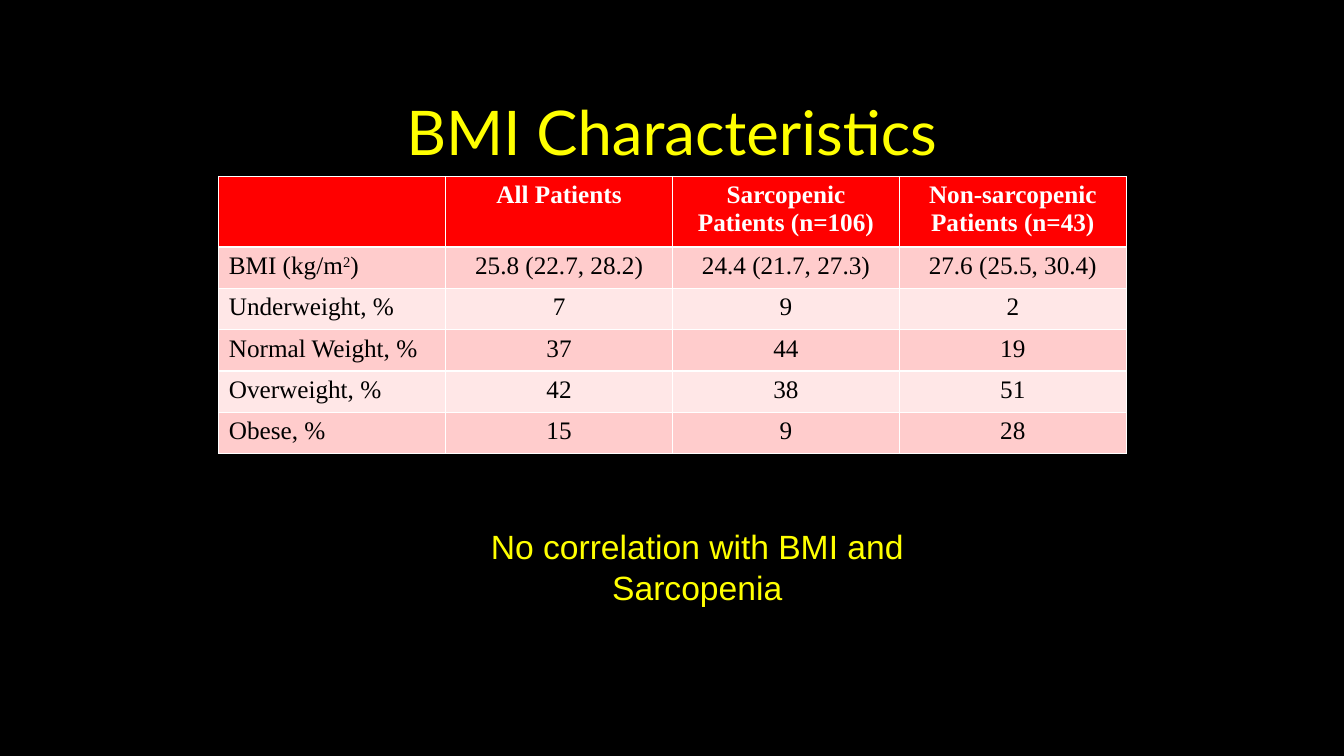
import dataclasses

import pptx
import pptx.dml.color
import pptx.enum.text
import pptx.util

Inches = pptx.util.Inches
Align = pptx.enum.text.PP_ALIGN
Anchor = pptx.enum.text.MSO_ANCHOR


@dataclasses.dataclass(frozen=True)
class Theme:
    """Colours, fonts and type sizes of the slide."""
    background: str = "000000"
    accent: str = "FFFF00"
    header_fill: str = "FF0000"
    header_text: str = "FFFFFF"
    body_text: str = "000000"
    bands: tuple = ("FFCCCC", "FFE7E7")
    title_font: str = "Lato"
    table_font: str = "Times New Roman"
    note_font: str = "Arial"
    title_size: int = 44
    table_size: int = 18
    note_size: int = 24


THEME = Theme()
BMI_ROWS = [
    ["", "All Patients", "Sarcopenic Patients (n=106)", "Non-sarcopenic Patients (n=43)"],
    [("BMI (kg/m", "2", ")"), "25.8 (22.7, 28.2)", "24.4 (21.7, 27.3)", "27.6 (25.5, 30.4)"],
    ["Underweight, %", "7", "9", "2"],
    ["Normal Weight, %", "37", "44", "19"],
    ["Overweight, %", "42", "38", "51"],
    ["Obese, %", "15", "9", "28"],
]


def rgb(colour):
    """Turn a hex string into a colour."""
    return pptx.dml.color.RGBColor.from_string(colour)


def style_font(font, name, size, colour, bold=False):
    """Set the typeface, size, colour and weight of a font."""
    font.name = name
    font.size = pptx.util.Pt(size)
    font.color.rgb = rgb(colour)
    font.bold = bold


def add_label(page, text, left, top, width, height, font, size, anchor):
    """Add a centred, wrapping text box in the accent colour."""
    box = page.shapes.add_textbox(Inches(left), Inches(top), Inches(width), Inches(height))
    box.text_frame.word_wrap = True
    box.text_frame.vertical_anchor = anchor
    box.text_frame.text = text
    para = box.text_frame.paragraphs[0]
    para.alignment = Align.CENTER
    style_font(para.runs[0].font, font, size, THEME.accent)


def fill_cell(cell, content, fill, colour, bold, alignment):
    """Write a cell; a tuple holds base text and superscript in turn."""
    cell.fill.solid()
    cell.fill.fore_color.rgb = rgb(fill)
    para = cell.text_frame.paragraphs[0]
    para.alignment = alignment
    if not content:
        return
    pieces = content if isinstance(content, tuple) else (content,)
    for index, piece in enumerate(pieces):
        span = para.add_run()
        span.text = piece
        style_font(span.font, THEME.table_font, THEME.table_size, colour, bold)
        if index % 2:
            span.font._element.set("baseline", "30000")


def add_bmi_table(page, rows, left, top, column_width, header_height, row_height):
    """Add a table with a header row and banded body rows."""
    columns = len(rows[0])
    height = header_height + row_height * (len(rows) - 1)
    table = page.shapes.add_table(len(rows), columns, Inches(left), Inches(top),
                                  Inches(column_width * columns), Inches(height)).table
    for row_index, row in enumerate(rows):
        header = row_index == 0
        table.rows[row_index].height = Inches(header_height if header else row_height)
        fill = THEME.header_fill if header else THEME.bands[(row_index - 1) % 2]
        colour = THEME.header_text if header else THEME.body_text
        for column_index, content in enumerate(row):
            alignment = Align.CENTER if header or column_index else Align.LEFT
            fill_cell(table.cell(row_index, column_index), content, fill, colour, header, alignment)


def main():
    """Build the BMI slide and save it."""
    deck = pptx.Presentation()
    deck.slide_width, deck.slide_height = Inches(13.33), Inches(7.5)
    page = deck.slides.add_slide(deck.slide_layouts[6])
    page.background.fill.solid()
    page.background.fill.fore_color.rgb = rgb(THEME.background)
    add_label(page, "BMI Characteristics", 1, 0.67, 11.33, 1.25,
              THEME.title_font, THEME.title_size, Anchor.MIDDLE)
    add_bmi_table(page, BMI_ROWS, 2.17, 1.75, 2.25, 0.7, 0.41)
    add_label(page, "No correlation with BMI and Sarcopenia", 4.25, 5.17, 5.33, 0.91,
              THEME.note_font, THEME.note_size, Anchor.TOP)
    deck.save("out.pptx")


if __name__ == "__main__":
    main()
